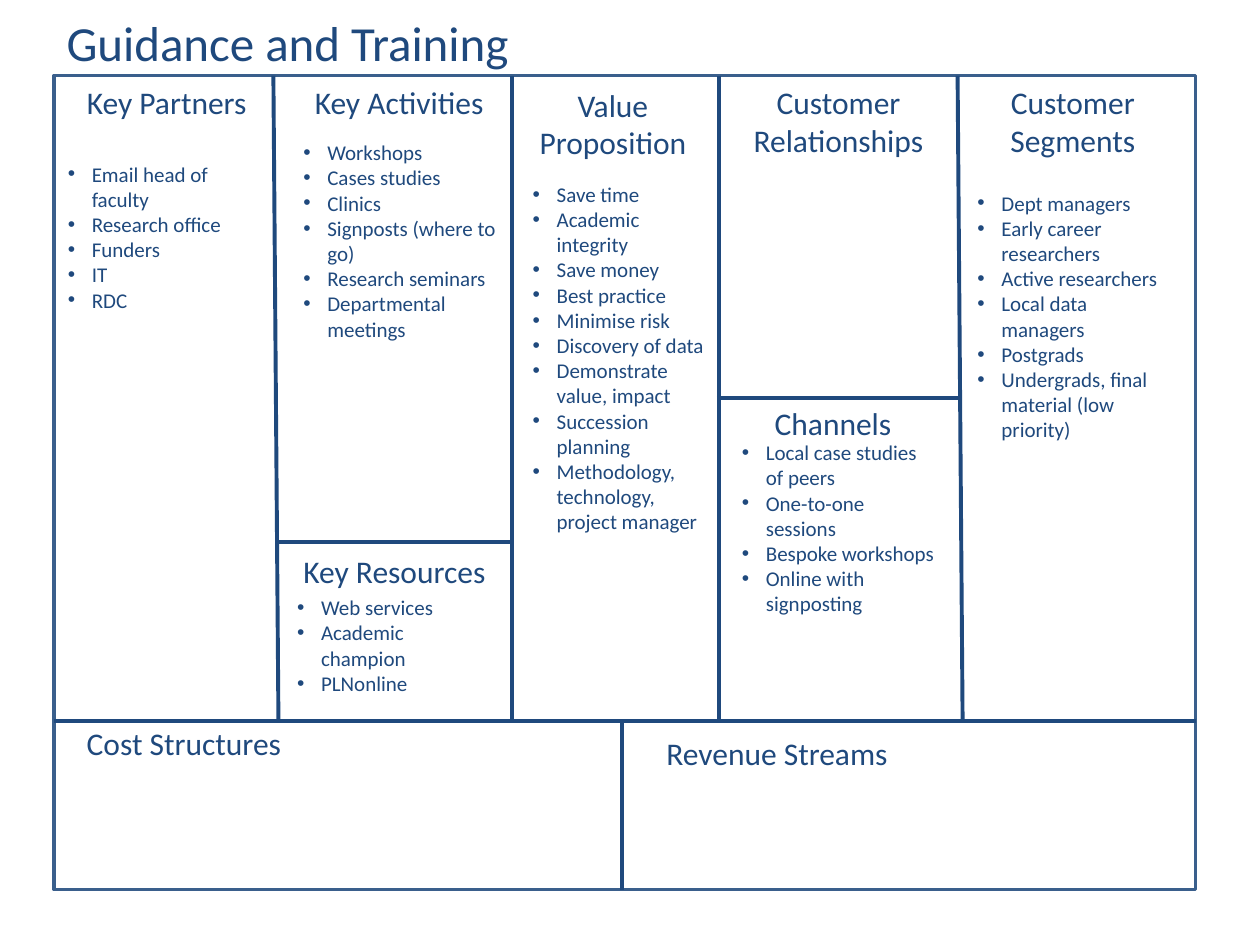
import pptx
import pptx.dml.color
import pptx.enum.shapes
import pptx.enum.text
import pptx.oxml.ns
import pptx.util
from lxml import etree
from pptx.util import Inches

NAVY = "1F497D"
FRAME_BLUE = "3A5F8C"


def color(hex_code):
    return pptx.dml.color.RGBColor.from_string(hex_code)


def add_bullet(paragraph, indent=0.19):
    """Give the paragraph a round bullet with a hanging indent in inches."""
    properties = paragraph._p.get_or_add_pPr()
    properties.set("marL", str(Inches(indent)))
    properties.set("indent", str(-Inches(indent)))
    font = etree.SubElement(properties, pptx.oxml.ns.qn("a:buFont"))
    font.set("typeface", "Arial")
    bullet = etree.SubElement(properties, pptx.oxml.ns.qn("a:buChar"))
    bullet.set("char", "•")


def write(frame, lines, size=18, centered=False, bullets=False):
    """Fill a text frame with one paragraph per line."""
    for index, line in enumerate(lines):
        paragraph = frame.paragraphs[0] if index == 0 else frame.add_paragraph()
        if centered:
            paragraph.alignment = pptx.enum.text.PP_ALIGN.CENTER
        if bullets:
            add_bullet(paragraph)
        run = paragraph.add_run()
        run.text = line
        run.font.name = "Calibri"
        run.font.size = pptx.util.Pt(size)
        run.font.color.rgb = color(NAVY)


class Canvas:
    def __init__(self, slide):
        self.slide = slide

    def frame(self, left, top, right, bottom):
        outline = self.slide.shapes.add_shape(
            pptx.enum.shapes.MSO_SHAPE.RECTANGLE,
            Inches(left), Inches(top), Inches(right - left), Inches(bottom - top))
        outline.shadow.inherit = False
        outline.fill.background()
        outline.line.color.rgb = color(FRAME_BLUE)
        outline.line.width = pptx.util.Pt(2)

    def divider(self, x1, y1, x2, y2):
        line = self.slide.shapes.add_connector(
            pptx.enum.shapes.MSO_CONNECTOR.STRAIGHT,
            Inches(x1), Inches(y1), Inches(x2), Inches(y2))
        line.line.color.rgb = color(NAVY)
        line.line.width = pptx.util.Pt(2.25)
        etree.SubElement(line._element.spPr, pptx.oxml.ns.qn("a:effectLst"))

    def text(self, left, top, width, height, lines, wrap=True, **text_format):
        box = self.slide.shapes.add_textbox(
            Inches(left), Inches(top), Inches(width), Inches(height))
        box.text_frame.word_wrap = wrap
        box.text_frame.auto_size = pptx.enum.text.MSO_AUTO_SIZE.SHAPE_TO_FIT_TEXT
        write(box.text_frame, lines, **text_format)

    def heading(self, left, top, width, title, size=18, height=0.4):
        self.text(left, top, width, height, [title], wrap=False, size=size)

    def wide_heading(self, left, top, width, title):
        self.text(left, top, width, 0.71, [title], centered=True)

    def bullet_list(self, left, top, width, height, items):
        self.text(left, top, width, height, items, size=12, bullets=True)


LEFT, TOP, RIGHT, BOTTOM = 0.43, 0.6, 9.49, 7.06
COLUMNS_END = 5.72

COLUMN_DIVIDERS = [(2.17, 2.21), (7.6, 7.64), (4.06, 4.06), (5.71, 5.71)]

ROW_DIVIDERS = [(2.21, 4.07, 4.3), (5.69, 7.62, 3.16), (LEFT, RIGHT, COLUMNS_END)]

HEADINGS = [
    (0.59, 0.61, 1.48, "Key Partners"),
    (2.4, 0.61, 1.56, "Key Activities"),
    (2.31, 4.33, 1.66, "Key Resources"),
    (6.05, 3.16, 1.14, "Channels"),
    (0.59, 5.7, 1.76, "Cost Structures"),
    (5.19, 5.78, 1.98, "Revenue Streams"),
]

WIDE_HEADINGS = [
    (4.1, 0.63, 1.53, "Value Proposition"),
    (5.79, 0.61, 1.73, "Customer Relationships"),
    (7.66, 0.61, 1.71, "Customer Segments"),
]

LISTS = [
    (0.44, 1.23, 1.73, 3.33, [
        "Email head of faculty", "Research office", "Funders", "IT", "RDC"]),
    (2.31, 1.06, 1.73, 2.32, [
        "Workshops", "Cases studies", "Clinics", "Signposts (where to go)",
        "Research seminars", "Departmental meetings"]),
    (2.26, 4.67, 1.73, 1.11, [
        "Web services", "Academic champion", "PLNonline"]),
    (7.66, 1.46, 1.73, 2.12, [
        "Dept managers", "Early career researchers", "Active researchers",
        "Local data managers", "Postgrads",
        "Undergrads, final material (low priority)"]),
    (5.79, 3.44, 1.73, 1.72, [
        "Local case studies of peers", "One-to-one sessions",
        "Bespoke workshops", "Online with signposting"]),
    (4.13, 1.39, 1.57, 3.53, [
        "Save time", "Academic integrity", "Save money", "Best practice",
        "Minimise risk", "Discovery of data", "Demonstrate value, impact",
        "Succession planning", "Methodology, technology, project manager"]),
]


def main():
    deck = pptx.Presentation()
    deck.slide_width, deck.slide_height = Inches(10), Inches(7.5)
    canvas = Canvas(deck.slides.add_slide(deck.slide_layouts[6]))

    canvas.frame(LEFT, TOP, RIGHT, BOTTOM)
    for x_top, x_bottom in COLUMN_DIVIDERS:
        canvas.divider(x_top, TOP, x_bottom, COLUMNS_END)
    for x_start, x_end, y in ROW_DIVIDERS:
        canvas.divider(x_start, y, x_end, y)
    canvas.divider(4.94, COLUMNS_END, 4.94, BOTTOM)

    canvas.heading(LEFT, 0.05, 3.84, "Guidance and Training", size=28, height=0.57)
    for heading in HEADINGS:
        canvas.heading(*heading)
    for heading in WIDE_HEADINGS:
        canvas.wide_heading(*heading)
    for bullet_list in LISTS:
        canvas.bullet_list(*bullet_list)

    deck.save("out.pptx")


if __name__ == "__main__":
    main()
